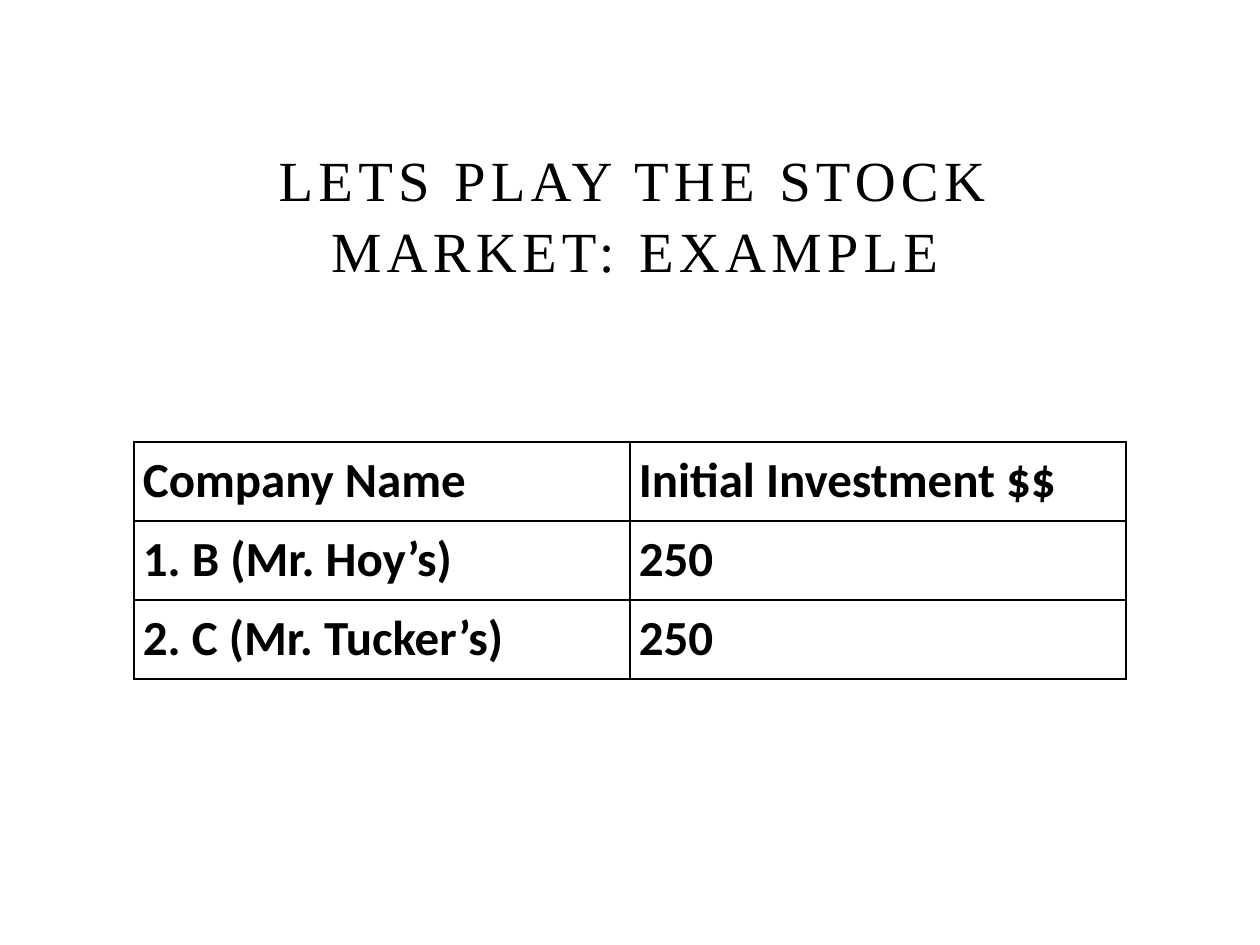
from typing import NamedTuple

from lxml import etree
from pptx import Presentation
from pptx import util as u
from pptx.dml import color
from pptx.enum import text
from pptx.oxml import ns

PX_PER_INCH = 126
INK = "000000"


class Holding(NamedTuple):
    company: str
    investment: str


HOLDINGS = [
    Holding("Company Name", "Initial Investment $$"),
    Holding("1. B (Mr. Hoy’s)", "250"),
    Holding("2. C (Mr. Tucker’s)", "250"),
]


def px(length: int) -> u.Emu:
    return u.Emu(round(length * 914400 / PX_PER_INCH))


def rgb(value: str) -> color.RGBColor:
    return color.RGBColor.from_string(value)


def write(frame, content: str, *, font: str, size: float, bold: bool = False,
          align=text.PP_ALIGN.LEFT, line_spacing: float = 1.0,
          letter_spacing: int = 0) -> None:
    """Fill a text frame with one formatted run; letter spacing is in points."""
    paragraph = frame.paragraphs[0]
    paragraph.alignment = align
    paragraph.line_spacing = line_spacing
    run = paragraph.add_run()
    run.text = content
    run.font.name = font
    run.font.size = u.Pt(size)
    run.font.bold = bold
    run.font.color.rgb = rgb(INK)
    if letter_spacing:
        run.font._element.set("spc", str(letter_spacing * 100))


def add_borders(cell, line_color: str, width: float) -> None:
    """Draw all four sides; border elements must precede the cell's fill."""
    properties = cell._tc.get_or_add_tcPr()
    for index, side in enumerate(("lnL", "lnR", "lnT", "lnB")):
        line = etree.Element(ns.qn(f"a:{side}"), w=str(u.Pt(width)))
        fill = etree.SubElement(line, ns.qn("a:solidFill"))
        etree.SubElement(fill, ns.qn("a:srgbClr"), val=line_color)
        properties.insert(index, line)


def add_holdings_table(slide, holdings: list[Holding], left: int, top: int,
                       column_width: int, row_height: int) -> None:
    columns = len(Holding._fields)
    table = slide.shapes.add_table(
        len(holdings), columns, px(left), px(top),
        px(column_width * columns), px(row_height * len(holdings))).table
    table.first_row = table.horz_banding = False
    for row, holding in enumerate(holdings):
        for column, content in enumerate(holding):
            cell = table.cell(row, column)
            cell.fill.background()
            cell.margin_left = cell.margin_right = px(9)
            cell.margin_top = cell.margin_bottom = 0
            write(cell.text_frame, content, font="Calibri", size=28, bold=True,
                  line_spacing=1.15)
            add_borders(cell, INK, 1)


def main() -> None:
    deck = Presentation()
    deck.slide_width, deck.slide_height = px(1260), px(945)
    slide = deck.slides.add_slide(deck.slide_layouts[5])
    slide.background.fill.solid()
    slide.background.fill.fore_color.rgb = rgb("FFFFFF")

    # Title
    title = slide.shapes.title
    title.left, title.top, title.width, title.height = map(px, (194, 195, 882, 95))
    title.text_frame.word_wrap = True
    title.text_frame.auto_size = text.MSO_AUTO_SIZE.NONE
    title.text_frame.vertical_anchor = text.MSO_ANCHOR.BOTTOM
    write(title.text_frame, "LETS PLAY THE STOCK MARKET: EXAMPLE",
          font="Times New Roman", size=32.4, align=text.PP_ALIGN.CENTER,
          line_spacing=1.04, letter_spacing=3)

    # Investments
    add_holdings_table(slide, HOLDINGS, left=134, top=442,
                       column_width=496, row_height=79)

    deck.save("out.pptx")


if __name__ == "__main__":
    main()
